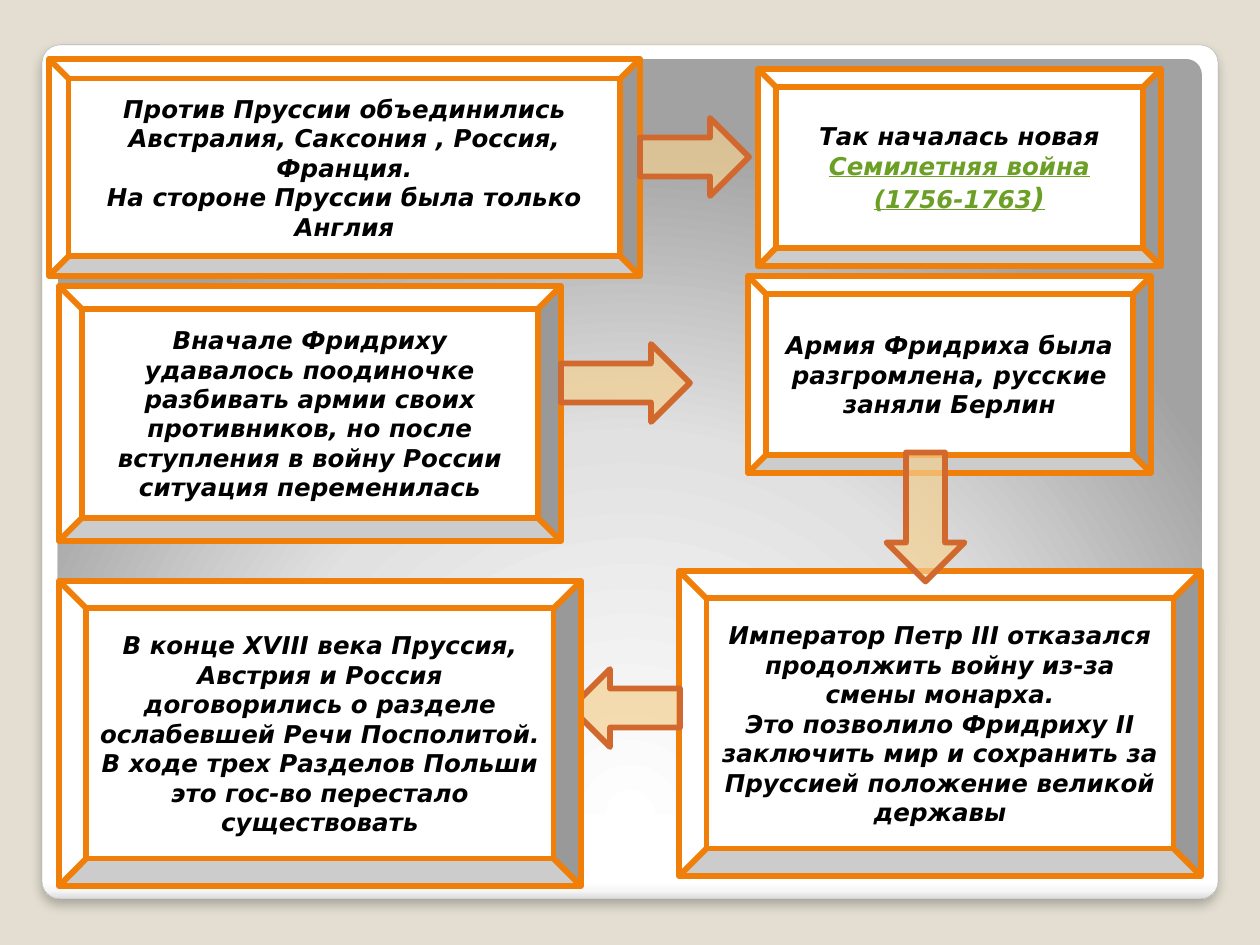
from dataclasses import dataclass

from lxml import etree
from pptx import Presentation
from pptx.dml.color import RGBColor
from pptx.enum.shapes import MSO_SHAPE
from pptx.enum.text import MSO_ANCHOR, PP_ALIGN
from pptx.oxml import parse_xml
from pptx.oxml.ns import qn
from pptx.util import Pt

ROUNDED = MSO_SHAPE.ROUNDED_RECTANGLE
BEVEL = MSO_SHAPE.BEVEL
ARROW = MSO_SHAPE.RIGHT_ARROW
CENTER = PP_ALIGN.CENTER
MIDDLE = MSO_ANCHOR.MIDDLE

EMU_PER_PX = 914400 / 126
DRAWING = "http://schemas.openxmlformats.org/drawingml/2006/main"
FONT = "DejaVu Sans"
LINE_WIDTH = 3.35
BLACK, WHITE, GREEN = "000000", "FFFFFF", "6B9F25"
BOX_LINE, ARROW_LINE, ARROW_FILL = "F07F09", "D1692F", "F4D090"


@dataclass
class Run:
    text: str
    color: str = BLACK
    size: int = 14
    underline: bool = False


@dataclass
class Box:
    left: int
    top: int
    width: int
    height: int
    paragraphs: list[list[Run]]


@dataclass
class Arrow:
    left: int
    top: int
    width: int
    rotation: int = 0
    height: int = 78


def px(value: int) -> int:
    return round(value * EMU_PER_PX)


def rgb(color: str) -> RGBColor:
    return RGBColor.from_string(color)


def add_shape(slide, kind, left: int, top: int, width: int, height: int):
    shape = slide.shapes.add_shape(kind, px(left), px(top), px(width), px(height))
    shape.shadow.inherit = False
    return shape


def set_line(shape, color: str, width: float) -> None:
    shape.line.color.rgb = rgb(color)
    shape.line.width = Pt(width)


def set_gradient(shape, stops: list[tuple[int, str]], direction: str) -> None:
    """Put a gradient right after the geometry; direction is its lin or path element."""
    stop_xml = "".join(
        f'<a:gs pos="{position * 1000}"><a:srgbClr val="{color}"/></a:gs>'
        for position, color in stops
    )
    gradient = parse_xml(
        f'<a:gradFill xmlns:a="{DRAWING}" rotWithShape="1">'
        f"<a:gsLst>{stop_xml}</a:gsLst>{direction}</a:gradFill>"
    )
    shape._element.spPr.find(qn("a:prstGeom")).addnext(gradient)


def add_frame(slide) -> None:
    # White card with a soft shadow
    card = add_shape(slide, ROUNDED, 42, 45, 1176, 854)
    card.adjustments[0] = 0.021
    set_line(card, "A4A4A4", 0.16)
    set_gradient(card, [(0, WHITE), (98, WHITE), (99, "F7F7F7"), (100, "DADADA")],
                 '<a:lin ang="5400000" scaled="0"/>')
    card._element.spPr.find(qn("a:effectLst")).append(parse_xml(
        f'<a:outerShdw xmlns:a="{DRAWING}" blurRad="{Pt(6)}" dist="{Pt(4)}" '
        'dir="5400000" algn="t" rotWithShape="0">'
        '<a:srgbClr val="000000"><a:alpha val="25000"/></a:srgbClr></a:outerShdw>'
    ))
    # Grey panel lit from below
    panel = add_shape(slide, ROUNDED, 58, 59, 1144, 756)
    panel.adjustments[0] = 0.021
    panel.line.fill.background()
    set_gradient(panel, [(0, WHITE), (55, "E1E1E1"), (100, "A2A2A2")],
                 '<a:path path="circle">'
                 '<a:fillToRect l="50000" t="175000" r="50000" b="-75000"/></a:path>')


def add_box(slide, box: Box) -> None:
    shape = add_shape(slide, BEVEL, box.left, box.top, box.width, box.height)
    shape.adjustments[0] = 0.09
    shape.fill.solid()
    shape.fill.fore_color.rgb = rgb(WHITE)
    set_line(shape, BOX_LINE, LINE_WIDTH)
    frame = shape.text_frame
    frame.word_wrap = True
    frame.vertical_anchor = MIDDLE
    for index, runs in enumerate(box.paragraphs):
        paragraph = frame.add_paragraph() if index else frame.paragraphs[0]
        paragraph.alignment = CENTER
        for item in runs:
            run = paragraph.add_run()
            run.text = item.text
            font = run.font
            font.name, font.size = FONT, Pt(item.size)
            font.bold = font.italic = True
            font.underline = item.underline
            font.color.rgb = rgb(item.color)


def add_arrow(slide, arrow: Arrow) -> None:
    shape = add_shape(slide, ARROW, arrow.left, arrow.top, arrow.width, arrow.height)
    shape.rotation = arrow.rotation
    shape.fill.solid()
    shape.fill.fore_color.rgb = rgb(ARROW_FILL)
    color = shape._element.spPr.find(qn("a:solidFill")).find(qn("a:srgbClr"))
    etree.SubElement(color, qn("a:alpha")).set("val", "69000")
    set_line(shape, ARROW_LINE, LINE_WIDTH)


# Events and the arrows between them, from back to front
FLOW = [
    Box(49, 59, 591, 217, [
        [Run("Против Пруссии объединились Австралия, Саксония , Россия, Франция.")],
        [Run("На стороне Пруссии была только Англия")],
    ]),
    Arrow(640, 118, 109),
    Box(758, 69, 403, 197, [
        [Run("Так началась новая "), Run("Семилетняя война", GREEN, underline=True)],
        [Run("(1756-1763", GREEN, underline=True), Run(")", GREEN, 16, True)],
    ]),
    Box(59, 286, 502, 255, [
        [Run("Вначале Фридриху удавалось поодиночке разбивать армии своих "
             "противников, но после вступления в войну России ситуация переменилась")],
    ]),
    Arrow(561, 344, 129),
    Box(748, 276, 403, 197, [
        [Run("Армия Фридриха была разгромлена, русские заняли Берлин")],
    ]),
    Box(679, 571, 522, 305, [
        [Run("Император Петр III отказался продолжить войну из-за смены монарха.")],
        [Run("Это позволило Фридриху II заключить мир и сохранить за Пруссией "
             "положение великой державы")],
    ]),
    Arrow(861, 478, 129, 90),
    Arrow(571, 669, 109, 180),
    Box(59, 581, 522, 305, [
        [Run("В конце XVIII века Пруссия, Австрия и Россия договорились о разделе "
             "ослабевшей Речи Посполитой. В ходе трех Разделов Польши это гос-во "
             "перестало существовать")],
    ]),
]


def main() -> None:
    presentation = Presentation()
    presentation.slide_width, presentation.slide_height = px(1260), px(945)
    slide = presentation.slides.add_slide(presentation.slide_layouts[6])
    slide.background.fill.solid()
    slide.background.fill.fore_color.rgb = rgb("E3DED1")
    add_frame(slide)
    for item in FLOW:
        if isinstance(item, Box):
            add_box(slide, item)
        else:
            add_arrow(slide, item)
    presentation.save("out.pptx")


if __name__ == "__main__":
    main()
